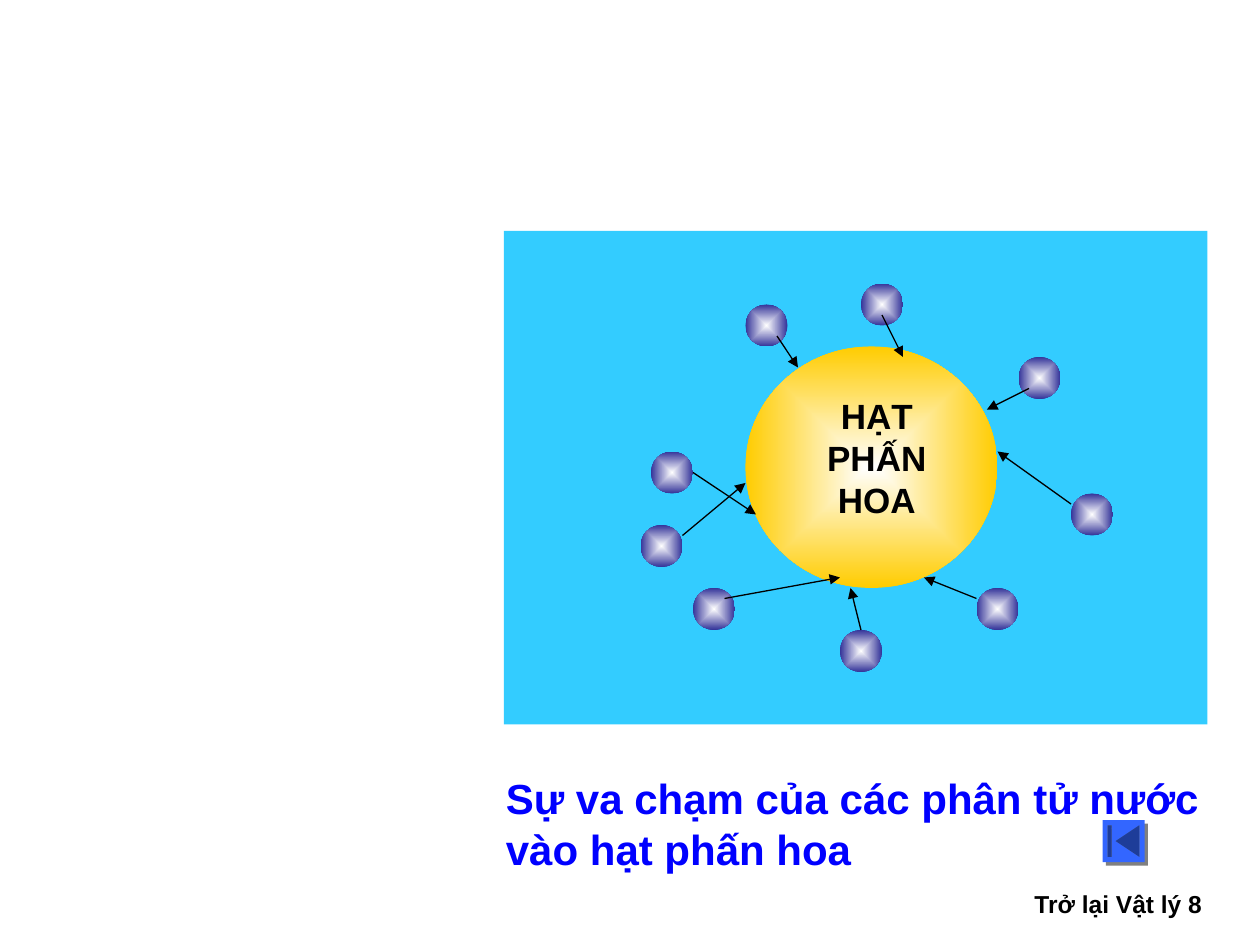
from lxml import etree
from pptx import Presentation
from pptx import util as u
from pptx.dml.color import RGBColor
from pptx.enum import shapes, text
from pptx.oxml.ns import qn

COLORS = {"water": "33CCFF", "pollen": "FFCC00", "molecule": "333399", "white": "FFFFFF",
          "caption": "0000FF", "black": "000000", "button": "3366FF", "shadow": "808080"}
COLORS = {name: RGBColor.from_string(value) for name, value in COLORS.items()}
STEP = u.Cm(2.54) / 12  # drawing grid: twelve steps per 2.54 cm


def add_figure(parent, kind, place, color, glow=False):
    """Borderless shape, flat or shading from a white centre to its colour."""
    figure = parent.add_shape(kind, *[round(n * STEP) for n in place])
    figure.shadow.inherit = False
    figure.line.fill.background()
    if not glow:
        figure.fill.solid()
        figure.fill.fore_color.rgb = COLORS[color]
        return figure
    figure.fill.gradient()
    for stop, name in zip(figure.fill.gradient_stops, ("white", color)):
        stop.color.rgb = COLORS[name]
    gradient = figure._element.spPr.find(qn("a:gradFill"))
    gradient.remove(gradient.find(qn("a:lin")))
    shading = etree.SubElement(gradient, qn("a:path"), path="shape")
    etree.SubElement(shading, qn("a:fillToRect"), l="50000", t="50000", r="50000", b="50000")
    return figure


def add_label(parent, words, place, size, color, align):
    box = parent.add_textbox(*[round(n * STEP) for n in place])
    frame = box.text_frame
    frame.word_wrap = True
    frame.auto_size = text.MSO_AUTO_SIZE.SHAPE_TO_FIT_TEXT
    frame.text = words
    para = frame.paragraphs[0]
    para.alignment = align
    font = para.runs[0].font
    font.name, font.size, font.bold = "Arial", u.Pt(size), True
    font.color.rgb = COLORS[color]


deck = Presentation()
deck.slide_width, deck.slide_height = u.Cm(25.4), u.Cm(19.05)
page = deck.slides.add_slide(deck.slide_layouts[6])
kinds = shapes.MSO_SHAPE
LEFT, CENTER = text.PP_ALIGN.LEFT, text.PP_ALIGN.CENTER

# Water
add_figure(page.shapes, kinds.RECTANGLE, (48, 22, 67, 47), "water")

# Pollen grain with its label
pollen = page.shapes.add_group_shape()
add_figure(pollen.shapes, kinds.OVAL, (71, 33, 24, 23), "pollen", glow=True)
add_label(pollen.shapes, "HẠT PHẤN HOA", (76, 37, 15, 13.2), 20, "black", CENTER)

# Water molecules
for left, top in [(71, 29), (82, 27), (102, 47), (97, 34), (80, 60),
                  (93, 56), (62, 43), (66, 56), (61, 50)]:
    add_figure(page.shapes, kinds.OVAL, (left, top, 4, 4), "molecule", glow=True)

# Collision arrows: from x, y to x, y
for ends in [(74, 32, 76, 35), (65, 51, 71, 46), (66, 45, 72, 49),
             (69, 57, 80, 55), (82, 60, 81, 56), (93, 57, 88, 55),
             (102, 48, 95, 43), (98, 37, 94, 39), (84, 30, 86, 34)]:
    arrow = page.shapes.add_connector(shapes.MSO_CONNECTOR.STRAIGHT,
                                      *[round(n * STEP) for n in ends])
    arrow.line.color.rgb = COLORS["black"]
    arrow.line.width = u.Pt(0.75)
    etree.SubElement(arrow.line._get_or_add_ln(), qn("a:tailEnd"), type="triangle")
    etree.SubElement(arrow._element.spPr, qn("a:effectLst"))

# Caption
add_label(page.shapes, "Sự va chạm của các phân tử nước vào hạt phấn hoa",
          (47, 73, 70, 10.8), 24, "caption", LEFT)

# Return button with a hard shadow, and its label
button = add_figure(page.shapes, kinds.ACTION_BUTTON_BEGINNING, (105, 78.1, 4, 4), "button")
effects = button._element.spPr.find(qn("a:effectLst"))
shadow = etree.SubElement(effects, qn("a:outerShdw"), dist=str(u.Pt(2.8)),
                          dir="2700000", algn="ctr", rotWithShape="0")
etree.SubElement(shadow, qn("a:srgbClr"), val=str(COLORS["shadow"]))
add_label(page.shapes, "Trở lại Vật lý 8", (97, 84.1, 19, 4), 14, "black", CENTER)

deck.save("out.pptx")
